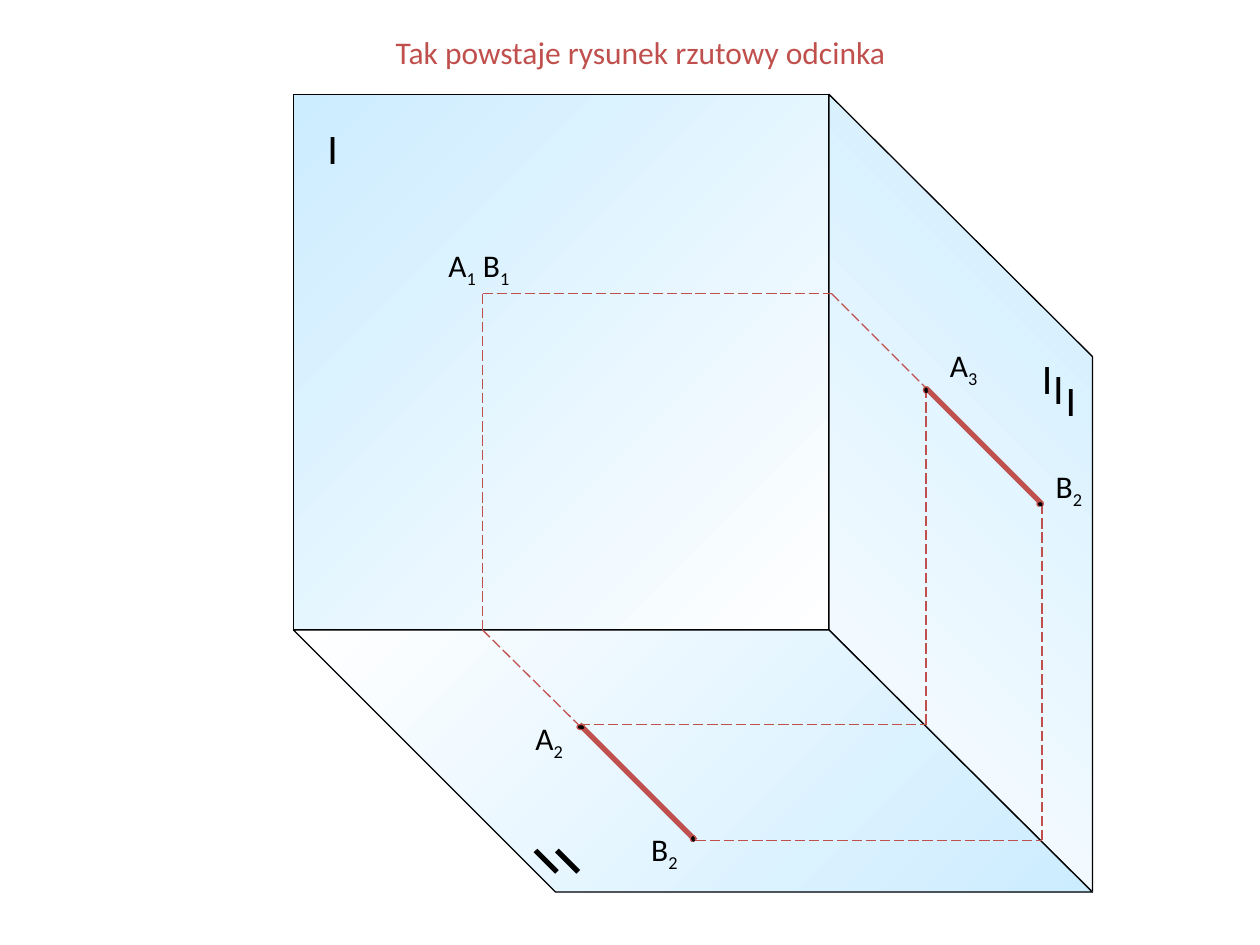
from typing import NamedTuple

from lxml.etree import SubElement
from pptx import Presentation
from pptx.dml.color import RGBColor
from pptx.enum.dml import MSO_LINE
from pptx.enum.shapes import MSO_CONNECTOR, MSO_SHAPE
from pptx.enum.text import MSO_ANCHOR, MSO_AUTO_SIZE as AutoSize, PP_ALIGN
from pptx.oxml.ns import qn
from pptx.util import Inches, Pt

RED, BLACK, WHITE, SKY = "C0504D", "000000", "FFFFFF", "CCECFF"


class Point(NamedTuple):
    x: float
    y: float


class Label(NamedTuple):
    text: str
    left: float
    top: float
    width: float


class Dot(NamedTuple):
    left: float
    top: float
    width: float
    height: float


def rgb(color: str) -> RGBColor:
    return RGBColor.from_string(color)


def shade(shape, start: str, end: str, angle: int) -> None:
    """Fill a plane with a two-colour gradient and outline it."""
    shape.shadow.inherit = False
    shape.fill.gradient()
    shape.fill.gradient_angle = angle
    for stop, color in zip(shape.fill.gradient_stops, (start, end)):
        stop.color.rgb = rgb(color)
    shape.line.color.rgb = rgb(BLACK)
    shape.line.width = Pt(0.75)


def draw_plane(shapes, corners: list[Point], start: str, end: str, angle: int) -> None:
    outline = shapes.build_freeform(*map(Inches, corners[0]), scale=1.0)
    outline.add_line_segments([tuple(map(Inches, c)) for c in corners[1:]], close=True)
    shade(outline.convert_to_shape(), start, end, angle)


def draw_line(shapes, start: Point, end: Point, color: str = RED,
              width: float = 3, dashed: bool = False):
    line = shapes.add_connector(MSO_CONNECTOR.STRAIGHT, *map(Inches, (*start, *end)))
    line.line.color.rgb = rgb(color)
    line.line.width = Pt(width)
    if dashed:
        line.line.dash_style = MSO_LINE.LONG_DASH
    SubElement(line._element.spPr, qn("a:effectLst"))
    return line


def draw_dot(shapes, dot: Dot) -> None:
    end = shapes.add_shape(MSO_SHAPE.OVAL, *map(Inches, dot))
    end.shadow.inherit = False
    end.fill.solid()
    end.fill.fore_color.rgb = rgb(BLACK)
    end.line.color.rgb = rgb(RED)
    end.line.width = Pt(0.75)
    end.line.dash_style = MSO_LINE.LONG_DASH


def write(paragraph, text: str, size: int, color: str):
    run = paragraph.add_run()
    run.text = text
    for name, value in {"name": "Calibri", "size": Pt(size)}.items():
        setattr(run.font, name, value)
    run.font.color.rgb = rgb(color)
    return run


def format_frame(frame, wrap: bool, anchor) -> None:
    settings = {"word_wrap": wrap, "vertical_anchor": anchor,
                "auto_size": AutoSize.SHAPE_TO_FIT_TEXT}
    for name, value in settings.items():
        setattr(frame, name, value)


def add_numeral(shapes, numeral: Label) -> None:
    box = shapes.add_textbox(*map(Inches, (*numeral[1:], 0.5)))
    format_frame(box.text_frame, True, MSO_ANCHOR.TOP)
    write(box.text_frame.paragraphs[0], numeral.text, 24, BLACK)


def add_label(shapes, label: Label) -> None:
    """Name a projected point; its digits become subscripts."""
    box = shapes.add_textbox(*map(Inches, (*label[1:], 0.37)))
    format_frame(box.text_frame, False, MSO_ANCHOR.MIDDLE)
    for part in label.text.replace("1", "|1|").replace("2", "|2|").replace("3", "|3|").split("|"):
        if part:
            run = write(box.text_frame.paragraphs[0], part, 18, BLACK)
            if part.isdigit():
                run._r.get_or_add_rPr().set("baseline", "-25000")


def main() -> None:
    prs = Presentation()
    prs.slide_width, prs.slide_height = Inches(10), Inches(7.5)
    slide = prs.slides.add_slide(prs.slide_layouts[5])
    shapes = slide.shapes

    # Title
    title = shapes.title
    for name, value in {"left": 3.04, "top": 0.23, "width": 4.31, "height": 0.37}.items():
        setattr(title, name, Inches(value))
    format_frame(title.text_frame, False, MSO_ANCHOR.MIDDLE)
    heading = title.text_frame.paragraphs[0]
    heading.alignment = PP_ALIGN.LEFT
    write(heading, "Tak powstaje rysunek rzutowy odcinka", 18, RED)

    # Projection planes I, III and II
    left, corner, right = 2.33, 6.58, 8.67
    top, floor, bottom = 0.75, 5, 7.08
    depth = bottom - floor
    front = shapes.add_shape(MSO_SHAPE.RECTANGLE,
                             *map(Inches, (left, top, corner - left, floor - top)))
    shade(front, SKY, WHITE, 315)
    draw_plane(shapes, [Point(right, bottom), Point(right, top + depth),
                        Point(corner, top), Point(corner, floor)], WHITE, SKY, 45)
    draw_plane(shapes, [Point(left, floor), Point(corner, floor),
                        Point(right, bottom), Point(left + depth, bottom)], WHITE, SKY, 315)

    # Plane numerals
    for numeral in (Label("I", 2.5, 0.92, 0.25), Label("I", 8.17, 2.75, 0.28),
                    Label("I", 8.26, 2.83, 0.28), Label("I", 8.36, 2.92, 0.23)):
        add_numeral(shapes, numeral)
    for x in (4.25, 4.42):
        draw_line(shapes, Point(x, 6.75), Point(x + 0.17, 6.92), BLACK)

    # Projections of the segment and the points where its rays fold
    ab1 = Point(3.83, 2.33)
    a2, b2 = Point(4.6, 5.75), Point(5.52, 6.67)
    a3, b3 = Point(7.35, 3.08), Point(8.27, 4)
    floor_fold, side_fold = Point(ab1.x, floor), Point(6.6, ab1.y)
    a_fold, b_fold = Point(a3.x, a2.y), Point(b3.x, b2.y)

    # Dashed projection rays
    for start, end in ((ab1, floor_fold), (floor_fold, b2), (ab1, side_fold),
                       (side_fold, b3), (a2, a_fold), (b2, b_fold),
                       (b3, b_fold), (a3, a_fold)):
        draw_line(shapes, start, end, width=0.75, dashed=True)

    # Projected segments with their end points
    for start, end in ((a2, b2), (a3, b3)):
        draw_line(shapes, start, end)
    for dot in (Dot(4.58, 5.75, 0.06, 0.04), Dot(5.48, 6.63, 0.04, 0.05),
                Dot(7.33, 3.07, 0.04, 0.05), Dot(8.23, 3.98, 0.05, 0.04)):
        draw_dot(shapes, dot)

    # Point labels
    for label in (Label("A1 B1", 3.46, 1.94, 0.75), Label("A2", 4.15, 5.69, 0.45),
                  Label("B2", 5.07, 6.57, 0.45), Label("A3", 7.44, 2.73, 0.45),
                  Label("B2", 8.28, 3.69, 0.45)):
        add_label(shapes, label)

    # On plane I the segment shrinks to a point
    point = draw_line(shapes, ab1, ab1)
    for tag in ("a:headEnd", "a:tailEnd"):
        SubElement(point.line._get_or_add_ln(), qn(tag), type="oval")

    prs.save("out.pptx")


if __name__ == "__main__":
    main()
